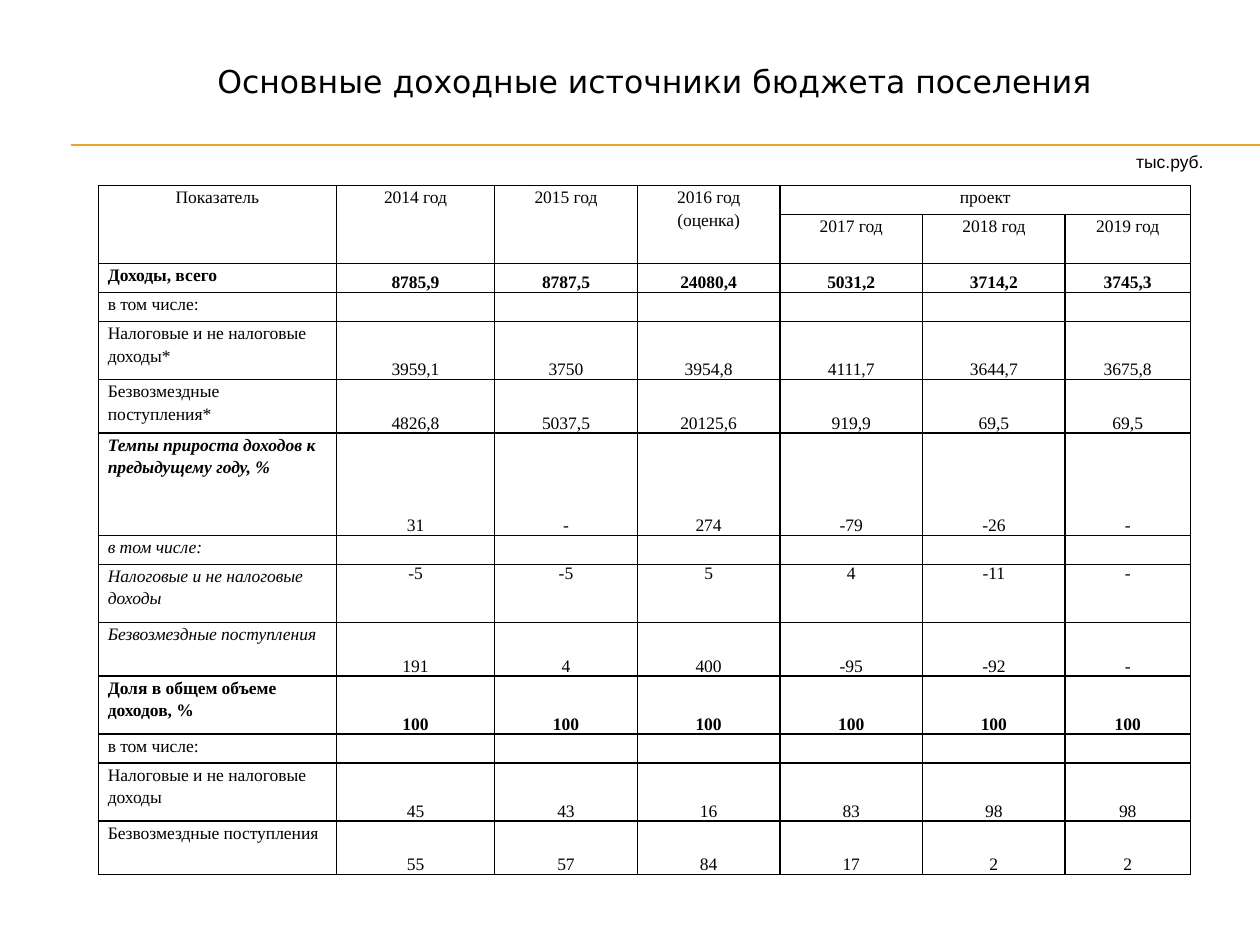
from lxml.etree import SubElement
from pptx import Presentation
from pptx.dml.color import RGBColor
from pptx.enum.shapes import MSO_CONNECTOR
from pptx.enum.text import MSO_ANCHOR, PP_ALIGN
from pptx.oxml import parse_xml
from pptx.oxml.ns import nsdecls, qn
from pptx.util import Pt

BLACK = RGBColor(0x00, 0x00, 0x00)
ORANGE = RGBColor(0xF0, 0xA2, 0x2E)
TABLE_FONT = "Times New Roman"


def write_text(frame, text, font="Arial", size=10, bold=False, italic=False,
               align=PP_ALIGN.LEFT, spacing=1.0):
    frame.word_wrap = True
    paragraph = frame.paragraphs[0]
    paragraph.alignment = align
    paragraph.line_spacing = spacing
    if not text:
        # An empty cell keeps the small type size so its row stays low
        SubElement(paragraph._p, qn("a:endParaRPr"), sz=str(size * 100))
        return
    run = paragraph.add_run()
    run.text = text
    run.font.name = font
    run.font.size = Pt(size)
    run.font.bold = bold
    run.font.italic = italic
    run.font.color.rgb = BLACK


def format_cell(cell, anchor=MSO_ANCHOR.TOP):
    cell.margin_left = cell.margin_right = Pt(5.4)
    cell.margin_top = cell.margin_bottom = Pt(0)
    cell.vertical_anchor = anchor
    properties = cell._tc.get_or_add_tcPr()
    for side in ("lnL", "lnR", "lnT", "lnB"):
        properties.append(parse_xml(
            f'<a:{side} {nsdecls("a")} w="{Pt(1)}"><a:solidFill>'
            f'<a:srgbClr val="{BLACK}"/></a:solidFill></a:{side}>'))
    cell.fill.background()


presentation = Presentation()
presentation.slide_width = Pt(720)
presentation.slide_height = Pt(540)
slide = presentation.slides.add_slide(presentation.slide_layouts[6])

# Double rule under the title
for y in (82.8, 83.3):
    rule = slide.shapes.add_connector(
        MSO_CONNECTOR.STRAIGHT, Pt(40.5), Pt(y), Pt(720), Pt(y))
    rule.line.color.rgb = ORANGE
    rule.line.width = Pt(0.75)
    SubElement(rule._element.spPr, qn("a:effectLst"))

# Unit label and title
unit = slide.shapes.add_textbox(Pt(570), Pt(83), Pt(124.8), Pt(19.4))
write_text(unit.text_frame, "тыс.руб.", align=PP_ALIGN.RIGHT)
title = slide.shapes.add_textbox(Pt(76.5), Pt(31.7), Pt(601), Pt(61))
write_text(title.text_frame, "Основные доходные источники бюджета поселения ",
           font="DejaVu Sans", size=18, align=PP_ALIGN.CENTER)

# Table grid
column_widths = [136, 90.5, 81.5, 81.5, 81.5, 81.5, 71.5]
row_heights = [16.6, 28, 16.6, 16.6, 33.2, 30.6, 58.4,
               16.6, 33.2, 30.6, 33.2, 16.6, 33.2, 30.6]
table_shape = slide.shapes.add_table(
    len(row_heights), len(column_widths), Pt(56.2), Pt(106),
    Pt(sum(column_widths)), Pt(sum(row_heights)))
table = table_shape.table
table.first_row = table.horz_banding = False
for column, width in zip(table.columns, column_widths):
    column.width = Pt(width)
for row, height in zip(table.rows, row_heights):
    row.height = Pt(height)

# Two header rows: the first four columns span both
headers = [
    ["Показатель", "2014 год", "2015 год", "2016 год (оценка)", "проект", None, None],
    [None, None, None, None, "2017 год", "2018 год", "2019 год"],
]
for row_index, header in enumerate(headers):
    for column_index, text in enumerate(header):
        cell = table.cell(row_index, column_index)
        format_cell(cell)
        write_text(cell.text_frame, text, font=TABLE_FONT,
                   align=PP_ALIGN.CENTER, spacing=1.15)
for column_index in range(4):
    table.cell(0, column_index).merge(table.cell(1, column_index))
table.cell(0, 4).merge(table.cell(0, 6))

# Body rows: label, label style, values
empty = [""] * 6
body = [
    ("Доходы, всего", "bold", ["8785,9", "8787,5", "24080,4", "5031,2", "3714,2", "3745,3"]),
    ("в том числе:", "", empty),
    ("Налоговые и не налоговые доходы*", "",
     ["3959,1", "3750", "3954,8", "4111,7", "3644,7", "3675,8"]),
    ("Безвозмездные поступления*", "",
     ["4826,8", "5037,5", "20125,6", "919,9", "69,5", "69,5"]),
    ("Темпы прироста доходов к предыдущему году, %", "bold italic",
     ["31", "-", "274", "-79", "-26", "-"]),
    ("в том числе:", "italic", empty),
    ("Налоговые и не налоговые доходы", "italic", ["-5", "-5", "5", "4", "-11", "-"]),
    ("Безвозмездные поступления", "italic", ["191", "4", "400", "-95", "-92", "-"]),
    ("Доля в общем объеме доходов, %", "bold", ["100"] * 6),
    ("в том числе:", "", empty),
    ("Налоговые и не налоговые доходы", "", ["45", "43", "16", "83", "98", "98"]),
    ("Безвозмездные поступления", "", ["55", "57", "84", "17", "2", "2"]),
]
TOP_ALIGNED_ROW = 8
SHARE_ROW = 10
for row_index, (label, style, values) in enumerate(body, start=2):
    label_cell = table.cell(row_index, 0)
    format_cell(label_cell)
    write_text(label_cell.text_frame, label, font=TABLE_FONT, spacing=1.15,
               bold="bold" in style, italic="italic" in style)
    anchor = MSO_ANCHOR.TOP if row_index == TOP_ALIGNED_ROW else MSO_ANCHOR.BOTTOM
    spacing = 1.15 if row_index == SHARE_ROW else 1.0
    for column_index, value in enumerate(values, start=1):
        cell = table.cell(row_index, column_index)
        format_cell(cell, anchor)
        write_text(cell.text_frame, value, font=TABLE_FONT, spacing=spacing,
                   bold=style == "bold", align=PP_ALIGN.CENTER)

presentation.save("out.pptx")
